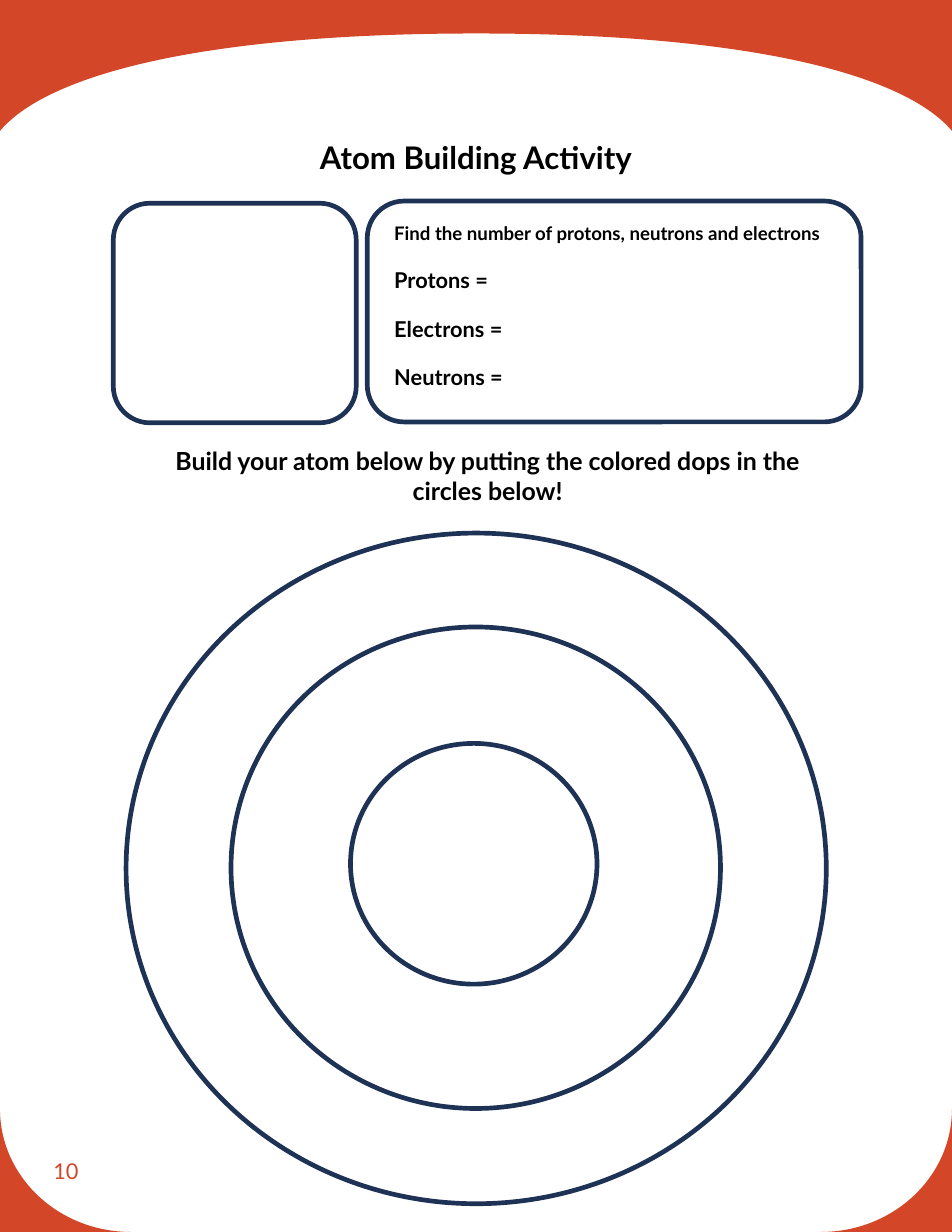
import lxml.etree
import pptx
import pptx.util
import pptx.dml.color
import pptx.enum.shapes
import pptx.enum.text
import pptx.oxml.ns

Cm, Pt = pptx.util.Cm, pptx.util.Pt
SHAPE = pptx.enum.shapes.MSO_SHAPE
ALIGN = pptx.enum.text.PP_ALIGN
ANCHOR = pptx.enum.text.MSO_ANCHOR
qn = pptx.oxml.ns.qn

FONT = "Lato"
COLORS = {"orange": "D34728", "navy": "1E3256", "black": "000000"}
WIDTH, HEIGHT = 21.59, 27.94

# Outlines are segments in cm: one point is a line, three are a Bezier curve.
ARCH = [
    [(0, 0)],
    [(0, 2.97)],
    [(1.04, 1.73), (4.45, 0.76), (10.8, 0.76)],
    [(17.14, 0.76), (20.55, 1.73), (WIDTH, 2.97)],
    [(WIDTH, 0)],
]
CORNER = [
    [(0, 25.15)],
    [(0, 26.69), (1.33, HEIGHT), (2.97, HEIGHT)],
    [(0, HEIGHT)],
]

# Boxes are left, top, width, height in cm.
SHELLS = [
    (2.86, 12.09, 15.88, 15.21),
    (5.24, 14.22, 11.1, 10.92),
    (7.95, 16.86, 5.59, 5.46),
]
FRAMES = [(2.57, 4.61, 5.51, 4.98), (8.33, 4.56, 11.2, 5.01)]

# Paragraphs are text, size, line spacing, space before.
TITLE = [("Atom Building Activity", 20, 1.3, 0)]
QUESTIONS = [("Find the number of protons, neutrons and electrons", 12, 1, 0)] + [
    (f"{particle} =", 14, 1.5, 6) for particle in ("Protons", "Electrons", "Neutrons")
]
INSTRUCTION = [("Build your atom below by putting the colored dops in the circles below!", 16, 1, 0)]
PAGE_NUMBER = [("10", 14, 1, 0)]


def rgb(name):
    return pptx.dml.color.RGBColor.from_string(COLORS[name])


def place(sp, box):
    sp.left, sp.top, sp.width, sp.height = (Cm(v) for v in box)


def mirror(segments):
    return [[(WIDTH - x, y) for x, y in segment] for segment in segments]


def add_border(shapes, segments):
    """Add an orange outline, joining the points of each curve into one Bezier."""
    points = [(Cm(x), Cm(y)) for segment in segments for x, y in segment]
    builder = shapes.build_freeform(*points[0])
    builder.add_line_segments(points[1:], close=True)
    sp = builder.convert_to_shape()
    lines = iter(list(sp._element.iter(qn("a:lnTo"))))
    for segment in segments[1:]:
        group = [next(lines) for _ in segment]
        if len(group) == 3:
            curve = lxml.etree.Element(qn("a:cubicBezTo"))
            group[0].addprevious(curve)
            for line in group:
                curve.append(line[0])
                line.getparent().remove(line)
    sp.shadow.inherit = False
    sp.fill.solid()
    sp.fill.fore_color.rgb = rgb("orange")
    sp.line.fill.background()


def add_outline(shapes, kind, box):
    sp = shapes.add_shape(kind, *(Cm(v) for v in box))
    sp.shadow.inherit = False
    sp.fill.background()
    sp.line.color.rgb = rgb("navy")
    sp.line.width = Pt(3)


def write(sp, paragraphs, color="black", bold=True, align=ALIGN.LEFT, anchor=ANCHOR.TOP):
    tf = sp.text_frame
    tf.word_wrap = True
    tf.auto_size = pptx.enum.text.MSO_AUTO_SIZE.NONE
    tf.vertical_anchor = anchor
    tf.margin_left = tf.margin_right = Cm(0.25)
    tf.margin_top = tf.margin_bottom = Cm(0.13)
    for i, (text, size, spacing, before) in enumerate(paragraphs):
        p = tf.add_paragraph() if i else tf.paragraphs[0]
        p.alignment = align
        p.line_spacing = spacing
        p.space_before = Pt(before)
        r = p.add_run()
        r.text = text
        r.font.name = FONT
        r.font.size = Pt(size)
        r.font.bold = bold
        r.font.color.rgb = rgb(color)


def add_text(shapes, box, paragraphs, **style):
    write(shapes.add_textbox(*(Cm(v) for v in box)), paragraphs, **style)


prs = pptx.Presentation()
prs.slide_width, prs.slide_height = Cm(WIDTH), Cm(HEIGHT)
s = prs.slides.add_slide(prs.slide_layouts[5])

for outline in (ARCH, CORNER, mirror(CORNER)):
    add_border(s.shapes, outline)

add_text(s.shapes, (0.96, 25.81, 4.85, 1.5), PAGE_NUMBER,
         color="orange", bold=False, anchor=ANCHOR.MIDDLE)
title = s.shapes.title
place(title, (0.9, 2.76, 19.79, 2.18))
write(title, TITLE, align=ALIGN.CENTER)

atom = s.shapes.add_group_shape()
for box in SHELLS:
    add_outline(atom.shapes, SHAPE.FLOWCHART_CONNECTOR, box)
for box in FRAMES:
    add_outline(s.shapes, SHAPE.ROUNDED_RECTANGLE, box)

add_text(s.shapes, (8.69, 4.91, 11.15, 4.52), QUESTIONS)
add_text(s.shapes, (3.12, 9.98, 15.88, 1.63), INSTRUCTION, align=ALIGN.CENTER)

prs.save("out.pptx")
